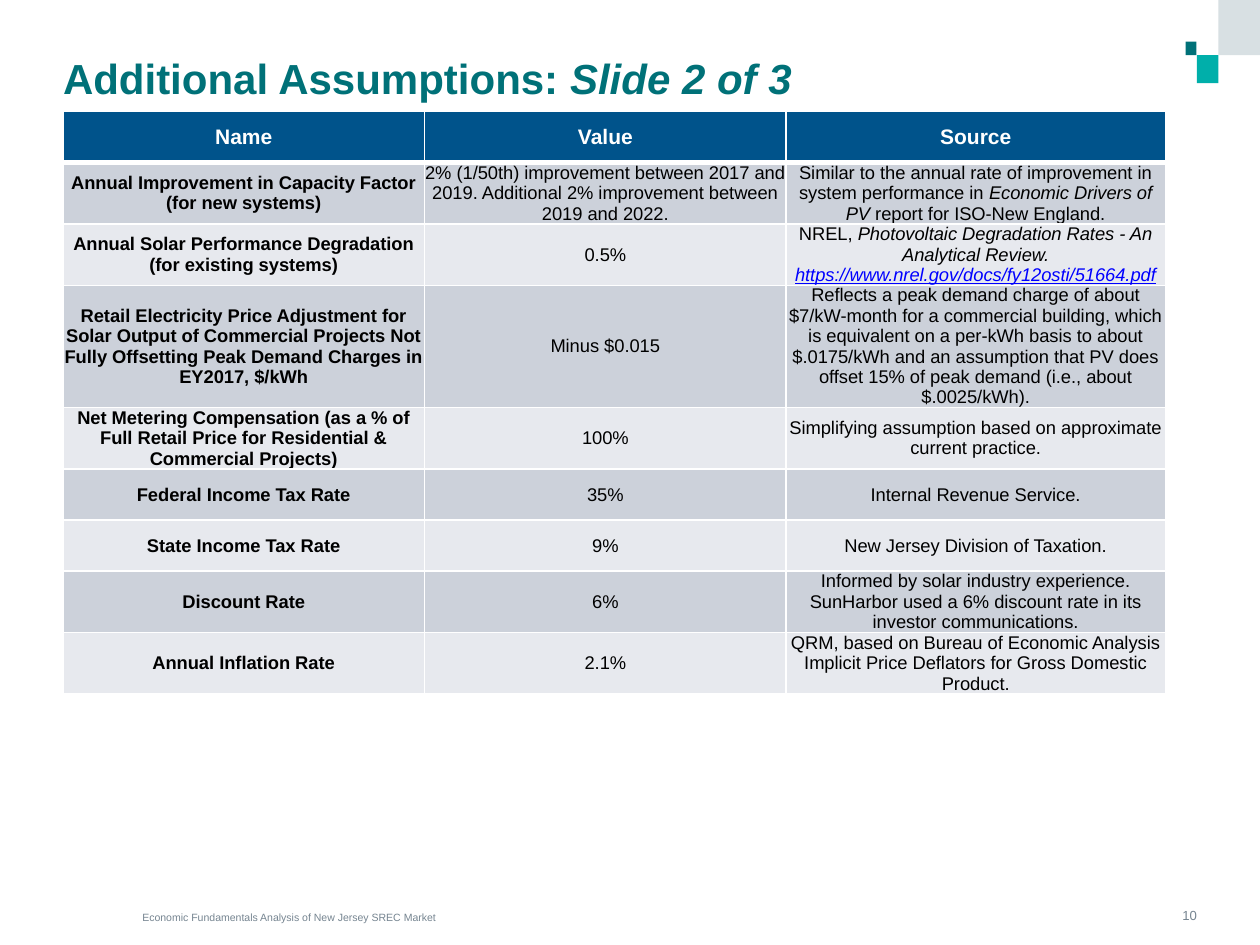
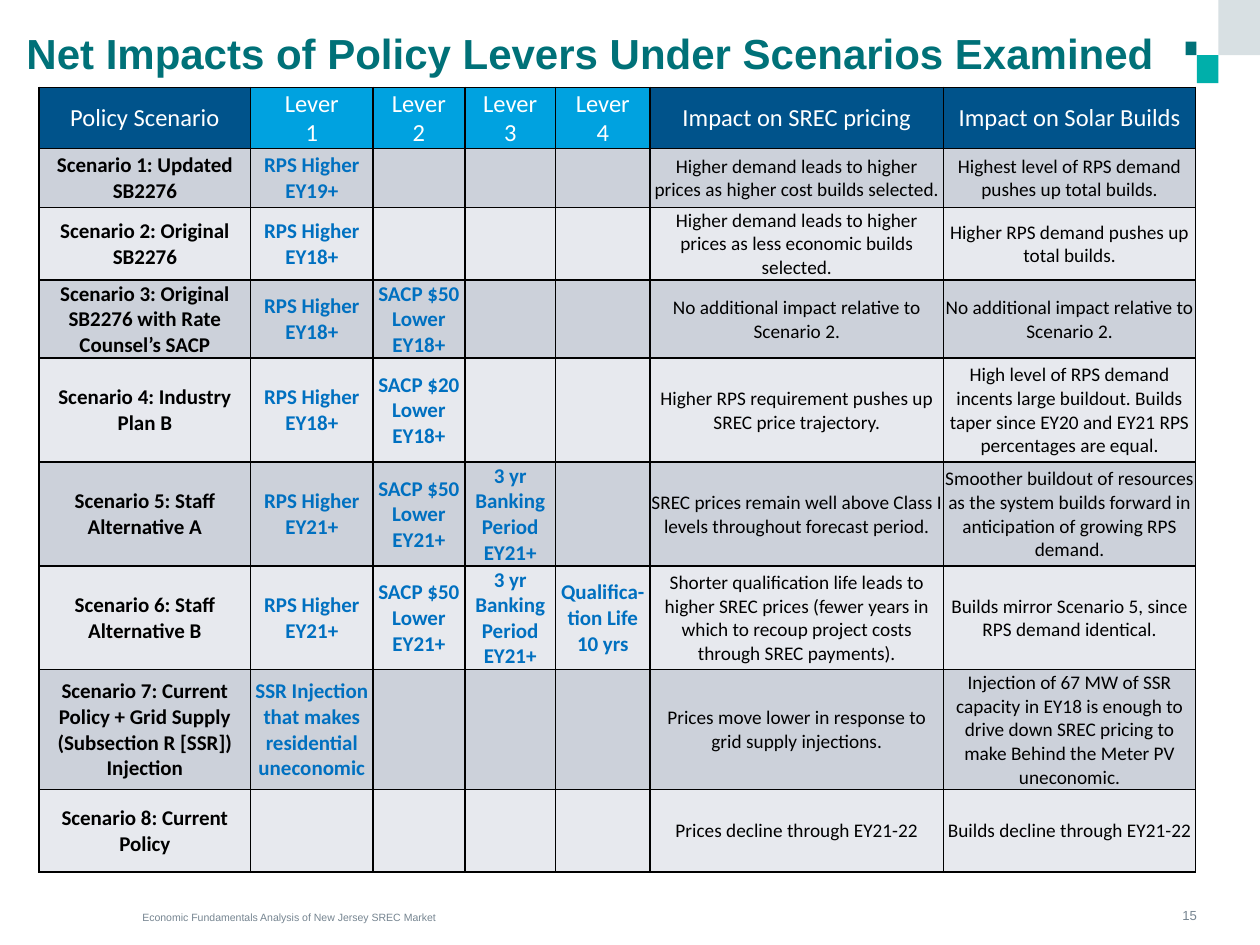
from lxml.etree import SubElement
from pptx import Presentation
from pptx.dml.color import RGBColor
from pptx.enum.shapes import MSO_SHAPE
from pptx.enum.text import MSO_ANCHOR, MSO_AUTO_SIZE, PP_ALIGN
from pptx.oxml.ns import qn
from pptx.util import Inches, Pt

COLORS = {
    "teal": "007178", "aqua": "00AFAA", "mist": "D8E0E3", "slate": "768591",
    "navy": "00538B", "sky": "00A2E0", "band_dark": "CCD1DA",
    "band_light": "E7E9EE", "lever": "0070C0", "link": "0000FF",
    "black": "000000", "white": "FFFFFF",
}
WIDTH, HEIGHT = Inches(10), Inches(7.5)
COL, ROW = WIDTH / 100, HEIGHT / 100
FOOTER = "Economic Fundamentals Analysis of New Jersey SREC Market"
MARKS = [("teal", (94.1, 4.4, 0.85, 1.45)), ("aqua", (95, 5.85, 1.7, 2.95)),
         ("mist", (96.7, 0, 3.3, 5.85))]

ASSUMPTIONS = {
    "box": (5, 11.8),
    "cols": [28.7, 28.7, 30.1],
    "rows": [5.4, 6.5, 6.5, 12.9, 6.5, 5.4, 5.4, 6.5, 6.5],
    "font": "Arial",
    "inset": 0,
    "border": ("white", 1, 3),
    "header": (12, True, "white"),
    "header_fills": ["navy"] * 3,
    "styles": [(10.5, True, "black")] + [(10.5, False, "black")] * 2,
    "cells": [
        ["Name", "Value", "Source"],
        ["Annual Improvement in Capacity Factor (for new systems)",
         "2% (1/50th) improvement between 2017 and 2019. Additional 2% "
         "improvement between 2019 and 2022.",
         [("Similar to the annual rate of improvement in system performance in ", ""),
          ("Economic Drivers of PV", "italic"),
          (" report for ISO-New England.", "")]],
        ["Annual Solar Performance Degradation (for existing systems)", "0.5%",
         [("NREL, ", ""),
          ("Photovoltaic Degradation Rates - An Analytical Review. ", "italic"),
          ("https://www.nrel.gov/docs/fy12osti/51664.pdf", "link")]],
        ["Retail Electricity Price Adjustment for Solar Output of Commercial "
         "Projects Not Fully Offsetting Peak Demand Charges in EY2017, $/kWh",
         "Minus $0.015",
         "Reflects a peak demand charge of about $7/kW-month for a commercial "
         "building, which is equivalent on a per-kWh basis to about $.0175/kWh "
         "and an assumption that PV does offset 15% of peak demand (i.e., about "
         "$.0025/kWh)."],
        ["Net Metering Compensation (as a % of Full Retail Price for "
         "Residential & Commercial Projects)", "100%",
         "Simplifying assumption based on approximate current practice."],
        ["Federal Income Tax Rate", "35%", "Internal Revenue Service."],
        ["State Income Tax Rate", "9%", "New Jersey Division of Taxation."],
        ["Discount Rate", "6%",
         "Informed by solar industry experience. SunHarbor used a 6% discount "
         "rate in its investor communications."],
        ["Annual Inflation Rate", "2.1%",
         "QRM, based on Bureau of Economic Analysis Implicit Price Deflators "
         "for Gross Domestic Product."],
    ],
}

SCENARIOS = {
    "box": (3.1, 9.25),
    "cols": [16.8, 9.7, 7.3, 7.2, 7.5, 23.3, 20],
    "rows": [6.45, 6.25, 7.6, 8.25, 11, 11, 10.9, 12.7, 8.7],
    "font": "Calibri",
    "inset": 0.01,
    "border": ("black", 1, 1),
    "header": (14, False, "white"),
    "header_fills": ["navy"] + ["sky"] * 4 + ["navy"] * 2,
    "styles": [(12, True, "black")] + [(12, True, "lever")] * 4
              + [(11, False, "black")] * 2,
    "cells": [
        ["Policy Scenario", *(f"Lever\n{n}" for n in range(1, 5)),
         "Impact on SREC pricing", "Impact on Solar Builds"],
        ["Scenario 1: Updated SB2276", "RPS Higher EY19+", "", "", "",
         "Higher demand leads to higher prices as higher cost builds selected.",
         "Highest level of RPS demand pushes up total builds."],
        ["Scenario 2: Original SB2276", "RPS Higher EY18+", "", "", "",
         "Higher demand leads to higher prices as less economic builds selected.",
         "Higher RPS demand pushes up total builds."],
        ["Scenario 3: Original SB2276 with Rate Counsel’s SACP",
         "RPS Higher EY18+", "SACP $50 Lower EY18+", "", "",
         "No additional impact relative to Scenario 2.",
         "No additional impact relative to Scenario 2."],
        ["Scenario 4: Industry Plan B", "RPS Higher EY18+",
         "SACP $20 Lower EY18+", "", "",
         "Higher RPS requirement pushes up SREC price trajectory.",
         "High level of RPS demand incents large buildout. Builds taper since "
         "EY20 and EY21 RPS percentages are equal."],
        ["Scenario 5: Staff Alternative A", "RPS Higher EY21+",
         "SACP $50 Lower EY21+", "3 yr Banking Period EY21+", "",
         "SREC prices remain well above Class I levels throughout forecast period.",
         "Smoother buildout of resources as the system builds forward in "
         "anticipation of growing RPS demand."],
        ["Scenario 6: Staff Alternative B", "RPS Higher EY21+",
         "SACP $50 Lower EY21+", "3 yr Banking Period EY21+",
         "Qualifica-tion Life 10 yrs",
         "Shorter qualification life leads to higher SREC prices (fewer years "
         "in which to recoup project costs through SREC payments).",
         "Builds mirror Scenario 5, since RPS demand identical."],
        ["Scenario 7: Current Policy + Grid Supply (Subsection R [SSR]) Injection",
         "SSR Injection that makes residential uneconomic", "", "", "",
         "Prices move lower in response to grid supply injections.",
         "Injection of 67 MW of SSR capacity in EY18 is enough to drive down "
         "SREC pricing to make Behind the Meter PV uneconomic."],
        ["Scenario 8: Current Policy", "", "", "", "",
         "Prices decline through EY21-22", "Builds decline through EY21-22"],
    ],
}


def rgb(name):
    """Return the named colour."""
    return RGBColor.from_string(COLORS[name])


def place(box):
    """Turn a box in slide columns and rows into lengths."""
    x, y, w, h = box
    return [round(v) for v in (x * COL, y * ROW, w * COL, h * ROW)]


def set_font(font, name, size, color, bold=False):
    """Set the face, size, colour and weight of a font."""
    font.name, font.size, font.bold = name, Pt(size), bold
    font.color.rgb = rgb(color)


def set_frame(tf, anchor):
    """Give a text frame no margins, wrapping and an anchor."""
    tf.margin_left = tf.margin_top = tf.margin_right = tf.margin_bottom = 0
    tf.word_wrap, tf.auto_size, tf.vertical_anchor = True, MSO_AUTO_SIZE.NONE, anchor


def add_runs(p, parts):
    """Add runs to a paragraph, each plain, italic or styled as a link."""
    for text, style in parts:
        r = p.add_run()
        r.text = text
        if style:
            r.font.italic = True
        if style == "link":
            r.font.underline = True
            r.font.color.rgb = rgb("link")


def add_title(s, box, parts):
    """Fill and place the title placeholder."""
    sp = s.shapes.title
    sp.left, sp.top, sp.width, sp.height = place(box)
    set_frame(sp.text_frame, MSO_ANCHOR.TOP)
    p = sp.text_frame.paragraphs[0]
    p.alignment, p.line_spacing = PP_ALIGN.LEFT, 0.9
    add_runs(p, parts)
    set_font(p.font, "Arial", 24, "teal", True)


def add_note(s, box, text, size, align):
    """Add a small grey line at the foot of the slide."""
    tf = s.shapes.add_textbox(*place(box)).text_frame
    set_frame(tf, MSO_ANCHOR.BOTTOM)
    p = tf.paragraphs[0]
    p.text, p.alignment = text, align
    set_font(p.font, "Arial", size, "slate")


def add_frame(s, number):
    """Add the corner marks, the footer and the page number."""
    for color, box in MARKS:
        sp = s.shapes.add_shape(MSO_SHAPE.RECTANGLE, *place(box))
        sp.shadow.inherit = False
        sp.fill.solid()
        sp.fill.fore_color.rgb = rgb(color)
        sp.line.fill.background()
    add_note(s, (11.3, 95.1, 35.7, 2.6), FOOTER, 6, PP_ALIGN.LEFT)
    add_note(s, (91.1, 92.4, 3.9, 5.3), str(number), 7.5, PP_ALIGN.RIGHT)


def set_borders(cell, color, widths):
    """Draw the left, right, top and bottom borders of a cell."""
    tc_pr = cell._tc.get_or_add_tcPr()
    for side, width in zip("LRTB", widths):
        ln = SubElement(tc_pr, qn(f"a:ln{side}"), w=str(Pt(width)))
        fill = SubElement(ln, qn("a:solidFill"))
        SubElement(fill, qn("a:srgbClr"), val=COLORS[color])


def fill_cell(cell, content, font, style):
    """Write centred text into a cell, one paragraph a line."""
    size, bold, color = style
    tf = cell.text_frame
    lines = ([[(line, "")] for line in content.split("\n")]
             if isinstance(content, str) else [content])
    for i, parts in enumerate(lines):
        p = tf.add_paragraph() if i else tf.paragraphs[0]
        p.alignment = PP_ALIGN.CENTER
        if parts[0][0]:
            add_runs(p, parts)
        set_font(p.font, font, size, color, bold)


def add_grid(s, t):
    """Add a banded table with a coloured header row."""
    box = (*t["box"], sum(t["cols"]), sum(t["rows"]))
    table = s.shapes.add_table(len(t["rows"]), len(t["cols"]), *place(box)).table
    for column, width in zip(table.columns, t["cols"]):
        column.width = round(width * COL)
    for row, height in zip(table.rows, t["rows"]):
        row.height = round(height * ROW)
    color, thin, thick = t["border"]
    for i, contents in enumerate(t["cells"]):
        band = "band_dark" if i % 2 else "band_light"
        for j, content in enumerate(contents):
            cell = table.cell(i, j)
            cell.margin_left = cell.margin_right = cell.margin_top = Inches(t["inset"])
            cell.margin_bottom = 0
            cell.vertical_anchor = MSO_ANCHOR.MIDDLE
            top, bottom = (thick if i == n else thin for n in (1, 0))
            set_borders(cell, color, (thin, thin, top, bottom))
            cell.fill.solid()
            cell.fill.fore_color.rgb = rgb(band if i else t["header_fills"][j])
            fill_cell(cell, content, t["font"], t["styles"][j] if i else t["header"])


def add_table_slide(prs, number, title_box, title, table):
    """Add a slide with a title, a table and the shared frame."""
    s = prs.slides.add_slide(prs.slide_layouts[5])
    add_frame(s, number)
    add_title(s, title_box, title)
    add_grid(s, table)


def main():
    """Build and save the slides."""
    prs = Presentation()
    prs.slide_width, prs.slide_height = WIDTH, HEIGHT
    add_table_slide(prs, 10, (5, 6.13, 75, 10.4),
                    [("Additional Assumptions: ", ""), ("Slide 2 of 3", "italic")],
                    ASSUMPTIONS)
    add_table_slide(prs, 15, (2.1, 3.47, 90.9, 10.4),
                    [("Net Impacts of Policy Levers Under Scenarios Examined", "")],
                    SCENARIOS)
    prs.save("out.pptx")


if __name__ == "__main__":
    main()
